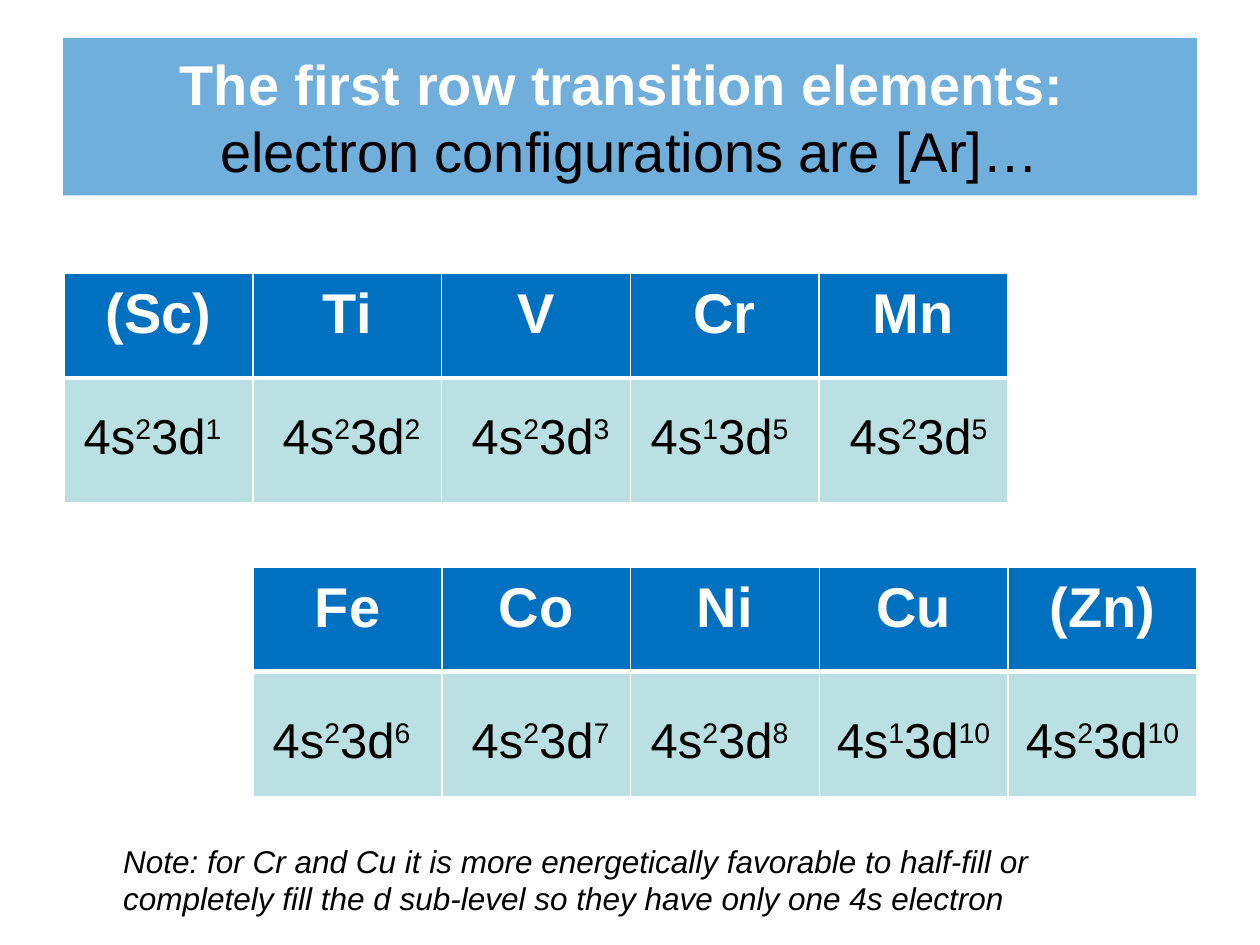
from lxml import etree
from pptx import Presentation
from pptx import util as u
from pptx.dml.color import RGBColor
from pptx.enum import text
from pptx.oxml.ns import qn

COLORS = {"header": "0070C0", "cell": "BBE0E3", "white": "FFFFFF", "black": "000000"}


def add_span(para, wording, size, color="black", baseline=0, **styles):
    span = para.add_run()
    span.text = wording
    values = {"name": "Arial", "size": u.Pt(size), "bold": False, **styles}
    for name, value in values.items():
        setattr(span.font, name, value)
    span.font.color.rgb = RGBColor.from_string(COLORS[color])
    if baseline:
        span._r.get_or_add_rPr().set("baseline", str(baseline * 1000))


def add_box(page, left, top, width, height):
    box = page.shapes.add_textbox(*map(u.Inches, (left, top, width, height)))
    box.text_frame.word_wrap = True
    return box.text_frame.paragraphs[0]


deck = Presentation()
deck.slide_width, deck.slide_height = u.Inches(10), u.Inches(7.5)
page = deck.slides.add_slide(deck.slide_layouts[5])

title = page.shapes.title
place = {"left": 0.5, "top": 0.3, "width": 9, "height": 1.25}
for name, value in place.items():
    setattr(title, name, u.Inches(value))
title.fill.solid()
title.fill.fore_color.rgb = RGBColor.from_string(COLORS["header"])
fill_color = title.fill._xPr.find(qn("a:solidFill"))[0]
etree.SubElement(fill_color, qn("a:alpha")).set("val", "56000")
title.text_frame.vertical_anchor = text.MSO_ANCHOR.MIDDLE
title.text_frame.word_wrap = True
para = title.text_frame.paragraphs[0]
para.alignment = text.PP_ALIGN.CENTER
add_span(para, "The first row transition elements: ", 32, "white", bold=True)
para.add_line_break()
add_span(para, "electron configurations are [Ar]…", 32)

element_rows = [
    (0.51, 2.17, 3.17, [("(Sc)", 0.5, "2", "1"), ("Ti", 2.08, "2", "2"),
                        ("V", 3.58, "2", "3"), ("Cr", 5, "1", "5"), ("Mn", 6.58, "2", "5")]),
    (2.01, 4.5, 5.58, [("Fe", 2, "2", "6"), ("Co", 3.58, "2", "7"),
                       ("Ni", 5, "2", "8"), ("Cu", 6.5, "1", "10"), ("(Zn)", 8, "2", "10")]),
]
for left, top, label_top, elements in element_rows:
    frame = page.shapes.add_table(2, len(elements), *map(u.Inches, (left, top, 7.49, 1.83)))
    table = frame.table
    for column in table.columns:
        column.width = u.Inches(7.49 / len(elements))
    for row, height in zip(table.rows, (0.83, 0.99)):
        row.height = u.Inches(height)

    for row_number, fill in enumerate(("header", "cell")):
        for column_number, element in enumerate(elements):
            cell = table.cell(row_number, column_number)
            properties = cell._tc.get_or_add_tcPr()
            for side in ("L", "R", "T", "B"):
                heavy = (row_number, side) in ((0, "B"), (1, "T"))
                line = etree.SubElement(properties, qn(f"a:ln{side}"))
                line.set("w", str(u.Pt(3 if heavy else 1)))
                paint = etree.SubElement(line, qn("a:solidFill"))
                etree.SubElement(paint, qn("a:srgbClr")).set("val", COLORS["white"])
            cell.fill.solid()
            cell.fill.fore_color.rgb = RGBColor.from_string(COLORS[fill])
            margins = {"margin_left": 0.07, "margin_right": 0.07,
                       "margin_top": 0, "margin_bottom": 0}
            for name, value in margins.items():
                setattr(cell, name, u.Inches(value))
            if row_number == 0:
                para = cell.text_frame.paragraphs[0]
                para.alignment = text.PP_ALIGN.CENTER
                para.line_spacing = 1.15
                add_span(para, element[0], 32, "white", bold=True)

    for symbol, label_left, s_count, d_count in elements:
        width = 1.5 if d_count == "10" else 1.42
        para = add_box(page, label_left, label_top, width, 0.57)
        para.alignment = text.PP_ALIGN.CENTER
        for wording, baseline in (("4s", 0), (s_count, 30), ("3d", 0), (d_count, 30)):
            add_span(para, wording, 28, baseline=baseline)

note = add_box(page, 0.88, 6.63, 8.54, 0.71)
add_span(note, "Note: for Cr and Cu it is more energetically favorable to half-fill or "
         "completely fill the d sub-level so they have only one 4s electron", 18, italic=True)

deck.save("out.pptx")
